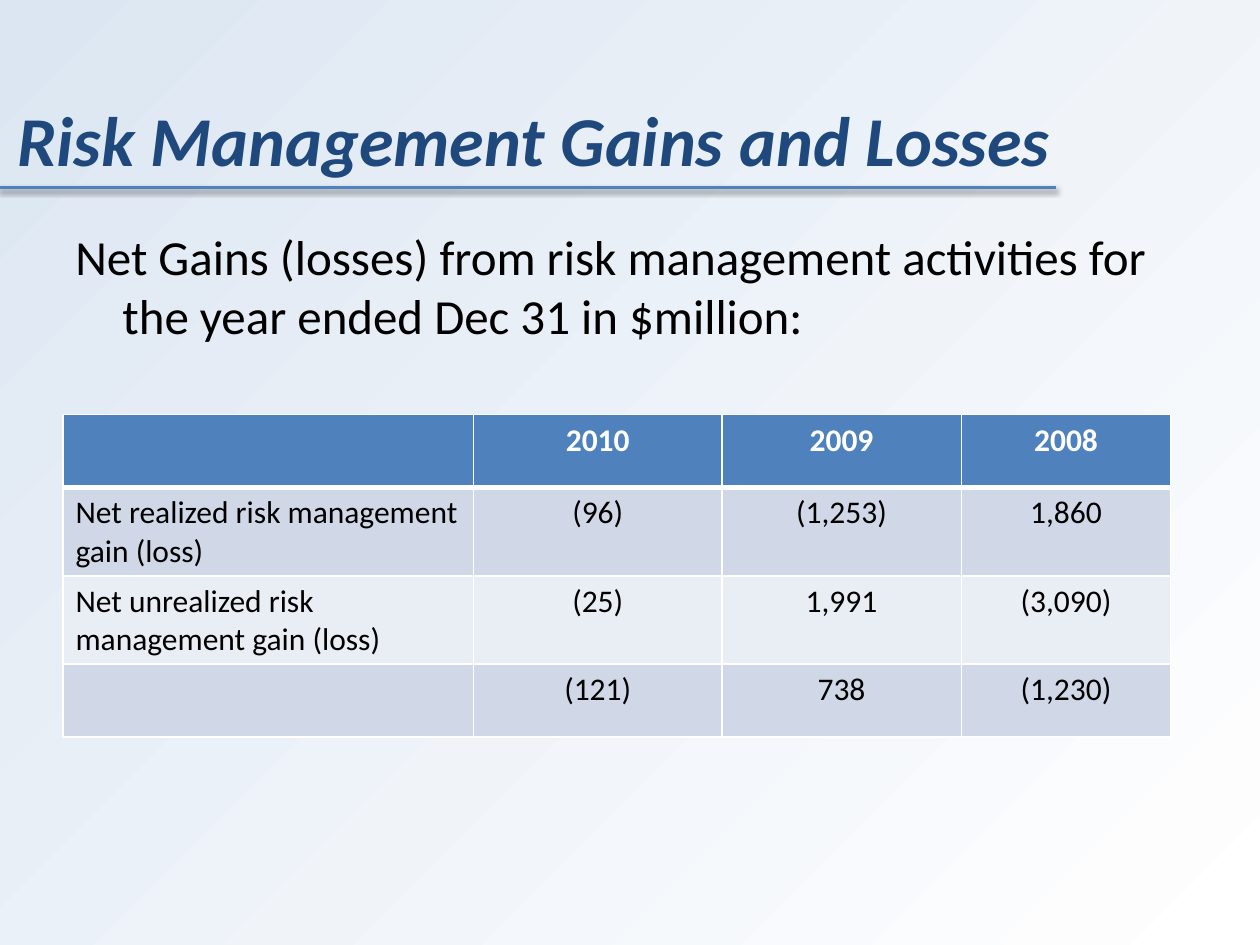
"""Build the slide on risk management gains and losses."""
from dataclasses import dataclass
from lxml.etree import SubElement
from pptx import Presentation
from pptx.dml.color import RGBColor
from pptx.enum.shapes import MSO_CONNECTOR
from pptx.enum.text import MSO_ANCHOR, PP_ALIGN
from pptx.oxml.ns import qn
from pptx.util import Cm, Pt

TITLE = "Risk Management Gains and Losses"
LEAD = ("Net Gains (losses) from risk management activities for "
        "the year ended Dec 31 in $million:")
ROWS = [
    ("", "2010", "2009", "2008"),
    ("Net realized risk management gain (loss)", "(96)", "(1,253)", "1,860"),
    ("Net unrealized risk management gain (loss)", "(25)", "1,991", "(3,090)"),
    ("", "(121)", "738", "(1,230)"),
]
WIDTHS = (8.28, 5, 4.83, 4.22)
HEIGHT = 1.47


@dataclass(frozen=True)
class Theme:
    """Colours and type sizes."""
    font: str = "Calibri"
    ink: str = "000000"
    white: str = "FFFFFF"
    navy: str = "1F497D"
    blue: str = "4F81BD"
    sky: str = "DCE6F2"
    bands: tuple = ("E9EDF4", "D0D8E8")
    title: int = 40
    lead: int = 28
    cell: int = 18


LOOK = Theme()


def rgb(code):
    """Turn a hex code into a colour."""
    return RGBColor.from_string(code)


def node(root, tag, **attrs):
    """Add an XML child."""
    return SubElement(root, qn(tag), {k: str(v) for k, v in attrs.items()})


def write(frame, text, size, color=LOOK.ink, bold=False, slant=False,
          align=PP_ALIGN.LEFT):
    """Put formatted text in a frame and return its paragraph."""
    frame.word_wrap = True
    para = frame.paragraphs[0]
    para.alignment = align
    run = para.add_run()
    run.text = text
    font = run.font
    font.name, font.size = LOOK.font, Pt(size)
    font.bold, font.italic = bold, slant
    font.color.rgb = rgb(color)
    return para


def paint(slide):
    """Fill the background from the lower right corner."""
    fill = slide.background.fill
    fill.gradient()
    for stop, code, spot in zip(fill.gradient_stops, (LOOK.white, LOOK.sky), (0, 1)):
        stop.color.rgb = rgb(code)
        stop.position = spot
    line = slide.element.find(".//" + qn("a:lin"))
    grad = line.getparent()
    grad.remove(line)
    node(node(grad, "a:path", path="circle"), "a:fillToRect", l=100000, t=100000)


def head(slide):
    """Add the title and its rule."""
    frame = slide.shapes.add_textbox(Cm(0.1), Cm(1.24), Cm(22.86), Cm(3.96)).text_frame
    frame.vertical_anchor = MSO_ANCHOR.MIDDLE
    frame.margin_bottom = Cm(0.97)
    write(frame, TITLE, LOOK.title, color=LOOK.navy, bold=True, slant=True)
    rule = slide.shapes.add_connector(
        MSO_CONNECTOR.STRAIGHT, Cm(21.29), Cm(3.78), Cm(0), Cm(3.78))
    rule.line.color.rgb = rgb(LOOK.blue)
    rule.line.width = Pt(2)
    glow = node(node(rule.element.spPr, "a:effectLst"), "a:outerShdw",
                blurRad=Pt(3.1), dist=Pt(1.6), dir=5400000, rotWithShape=0)
    node(node(glow, "a:srgbClr", val=LOOK.ink), "a:alpha", val=38000)


def lead(slide):
    """Add the hanging lead sentence."""
    box = slide.shapes.add_textbox(Cm(1.27), Cm(4.45), Cm(22.86), Cm(12.57))
    para = write(box.text_frame, LEAD, LOOK.lead)
    para.space_before = Pt(0.2 * LOOK.lead)
    props = para._p.get_or_add_pPr()
    props.set("marL", str(Cm(0.95)))
    props.set("indent", str(Cm(-0.95)))


def edge(cell, row):
    """Draw white cell borders, heavy under the header."""
    props = cell._tc.get_or_add_tcPr()
    wide = {"T": 3 if row == 1 else 1, "B": 3 if row == 0 else 1}
    for side in "LRTB":
        line = node(props, f"a:ln{side}", w=Pt(wide.get(side, 1)))
        node(node(line, "a:solidFill"), "a:srgbClr", val=LOOK.white)


def grid(slide):
    """Add the table of gains and losses."""
    table = slide.shapes.add_table(
        len(ROWS), len(WIDTHS), Cm(1.27), Cm(8.36),
        Cm(sum(WIDTHS)), Cm(HEIGHT * len(ROWS))).table
    for col, wide in zip(table.columns, WIDTHS):
        col.width = Cm(wide)
    for r, row in enumerate(ROWS):
        table.rows[r].height = Cm(HEIGHT)
        top = r == 0
        for c, text in enumerate(row):
            cell = table.cell(r, c)
            edge(cell, r)
            cell.fill.solid()
            cell.fill.fore_color.rgb = rgb(LOOK.blue if top else LOOK.bands[r % 2])
            if text:
                write(cell.text_frame, text, LOOK.cell, bold=top,
                      color=LOOK.white if top else LOOK.ink,
                      align=PP_ALIGN.CENTER if c else PP_ALIGN.LEFT)


def main():
    """Build and save the deck."""
    deck = Presentation()
    deck.slide_width, deck.slide_height = Cm(25.4), Cm(19.05)
    slide = deck.slides.add_slide(deck.slide_layouts[6])
    for part in (paint, head, lead, grid):
        part(slide)
    deck.save("out.pptx")


if __name__ == "__main__":
    main()
